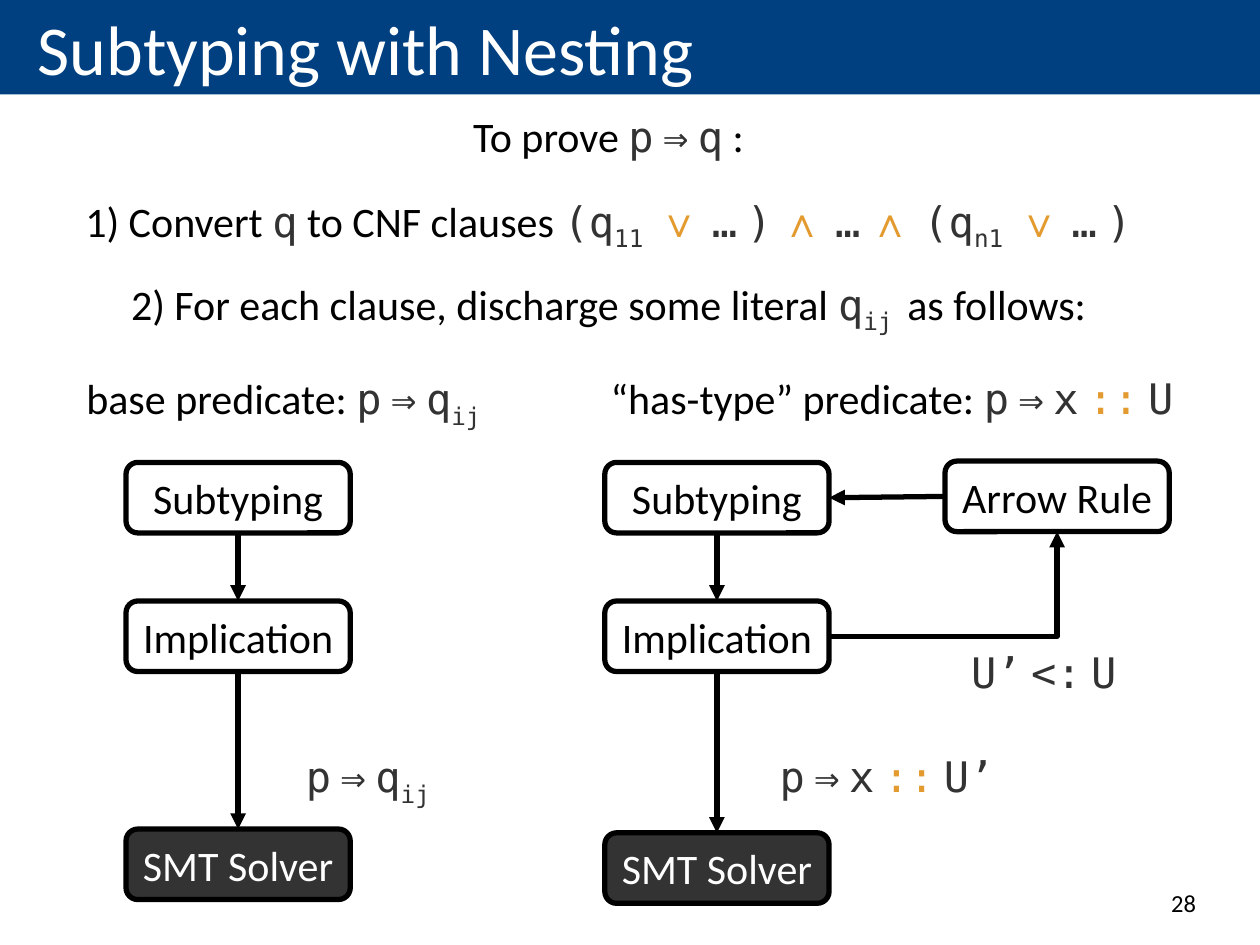
from itertools import groupby

from pptx import Presentation
from pptx.dml.color import RGBColor
from pptx.enum.shapes import MSO_CONNECTOR as Connector, MSO_SHAPE as Shape
from pptx.enum.text import MSO_ANCHOR as Anchor, PP_ALIGN as Align
from pptx.oxml.ns import qn
from pptx.util import Inches, Pt

COLORS = {
    "banner": "004080",
    "white": "FFFFFF",
    "black": "000000",
    "formula": "333333",
    "operator": "E39B30",
}
TEXT_FONT, CODE_FONT, SYMBOL_FONT = "Calibri", "DejaVu Sans Mono", "Arial"
ROLES = {
    "text": (TEXT_FONT, "black"),
    "light": (TEXT_FONT, "white"),
    "formula": (CODE_FONT, "formula"),
    "sub": (CODE_FONT, "formula"),
    "colons": (CODE_FONT, "operator"),
    "logic": (SYMBOL_FONT, "operator"),
}
BOX_WIDTH, BOX_HEIGHT = 1.78, 0.56


class SlideBuilder:
    def __init__(self, slide):
        self.slide = slide

    def color(self, name):
        return RGBColor.from_string(COLORS[name])

    def add_runs(self, frame, pieces, size=24, align=Align.CENTER):
        paragraph = frame.paragraphs[0]
        paragraph.alignment = align
        for text, role in pieces:
            font_name, color = ROLES[role]
            parts = [text]
            if role in ("formula", "colons"):
                parts = ["".join(group) for _, group in groupby(text, str.isspace)]
            for part in parts:
                run = paragraph.add_run()
                run.text = part
                run.font.name = TEXT_FONT if part.isspace() else font_name
                run.font.size = Pt(size)
                run.font.color.rgb = self.color(color)
                if role == "sub":
                    run._r.get_or_add_rPr().set("baseline", "-25000")

    def title(self, text):
        title = self.slide.shapes.title
        title.left, title.top = Inches(0), Inches(0)
        title.width, title.height = Inches(10), Inches(0.75)
        title.fill.solid()
        title.fill.fore_color.rgb = self.color("banner")
        frame = title.text_frame
        frame.vertical_anchor = Anchor.MIDDLE
        frame.margin_left = Inches(0.3)
        self.add_runs(frame, [(text, "light")], 40, Align.LEFT)

    def text(self, left, top, width, pieces, size=24, align=Align.CENTER, anchor=Anchor.TOP):
        box = self.slide.shapes.add_textbox(
            Inches(left), Inches(top), Inches(width), Inches(0.5))
        box.text_frame.word_wrap = True
        box.text_frame.vertical_anchor = anchor
        self.add_runs(box.text_frame, pieces, size, align)

    def box(self, left, top, label, dark=False):
        box = self.slide.shapes.add_shape(
            Shape.ROUNDED_RECTANGLE, Inches(left), Inches(top),
            Inches(BOX_WIDTH), Inches(BOX_HEIGHT))
        box.shadow.inherit = False
        if dark:
            box.fill.solid()
            box.fill.fore_color.rgb = self.color("formula")
        else:
            box.fill.background()
        box.line.color.rgb = self.color("black")
        box.line.width = Pt(3)
        box.text_frame.word_wrap = False
        box.text_frame.vertical_anchor = Anchor.MIDDLE
        self.add_runs(box.text_frame, [(label, "light" if dark else "text")])

    def arrow(self, start, end, bent=False):
        kind = Connector.ELBOW if bent else Connector.STRAIGHT
        connector = self.slide.shapes.add_connector(
            kind, *(Inches(value) for value in (*start, *end)))
        connector.line.color.rgb = self.color("black")
        connector.line.width = Pt(3)
        properties = connector._element.spPr
        if bent:
            properties.find(qn("a:prstGeom")).set("prst", "bentConnector2")
        line = properties.find(qn("a:ln"))
        line.append(line.makeelement(qn("a:tailEnd"), {"type": "triangle"}))
        properties.append(properties.makeelement(qn("a:effectLst"), {}))

    def chain(self, left, solver_top):
        center = left + BOX_WIDTH / 2
        tops = (3.67, 4.77, solver_top)
        for top, label in zip(tops, ("Subtyping", "Implication", "SMT Solver")):
            self.box(left, top, label, dark=label == "SMT Solver")
        for upper, lower in zip(tops, tops[1:]):
            self.arrow((center, upper + BOX_HEIGHT), (center, lower))


def main():
    presentation = Presentation()
    presentation.slide_width, presentation.slide_height = Inches(10), Inches(7.5)
    slide = presentation.slides.add_slide(presentation.slide_layouts[5])
    builder = SlideBuilder(slide)

    builder.title("Subtyping with Nesting")
    builder.text(7.17, 6.83, 2.42, [("28", "text")], 14, Align.RIGHT, Anchor.BOTTOM)

    goal = [("p ⇒ q", "formula"), ("ij", "sub")]
    has_type = [("p ⇒ x ", "formula"), (":: ", "colons")]
    steps = [
        (0.83, [("To prove ", "text"), ("p ⇒ q ", "formula"), (":", "text")]),
        (1.5, [
            ("1) Convert ", "text"), ("q ", "formula"), ("to CNF clauses ", "text"),
            ("(q", "formula"), ("11 ", "sub"), ("∨ ", "logic"), ("… ) ", "formula"),
            ("∧ ", "logic"), ("… ", "formula"), ("∧ ", "logic"),
            ("(q", "formula"), ("n1 ", "sub"), ("∨ ", "logic"), ("… )", "formula"),
        ]),
        (2.16, [
            ("2) For each clause, discharge some literal ", "text"),
            ("q", "formula"), ("ij ", "sub"), ("as follows:", "text"),
        ]),
    ]
    for top, pieces in steps:
        builder.text(0.08, top, 9.5, pieces)

    builder.text(0, 2.91, 4.5, [("base predicate: ", "text"), *goal])
    builder.text(4.33, 2.91, 5.5,
                 [("“has-type” predicate: ", "text"), *has_type, ("U", "formula")])

    builder.chain(1, 6.58)
    builder.chain(4.8, 6.61)
    builder.box(7.5, 3.66, "Arrow Rule")
    builder.arrow((7.5, 3.94), (6.58, 3.95))
    builder.arrow((6.58, 5.05), (8.39, 4.22), bent=True)

    builder.text(1.92, 5.91, 2, goal)
    builder.text(5.75, 5.91, 2.58, [*has_type, ("U’", "formula")])
    builder.text(7.37, 5.08, 1.83, [("U’ <: U", "formula")])

    presentation.save("out.pptx")


if __name__ == "__main__":
    main()
